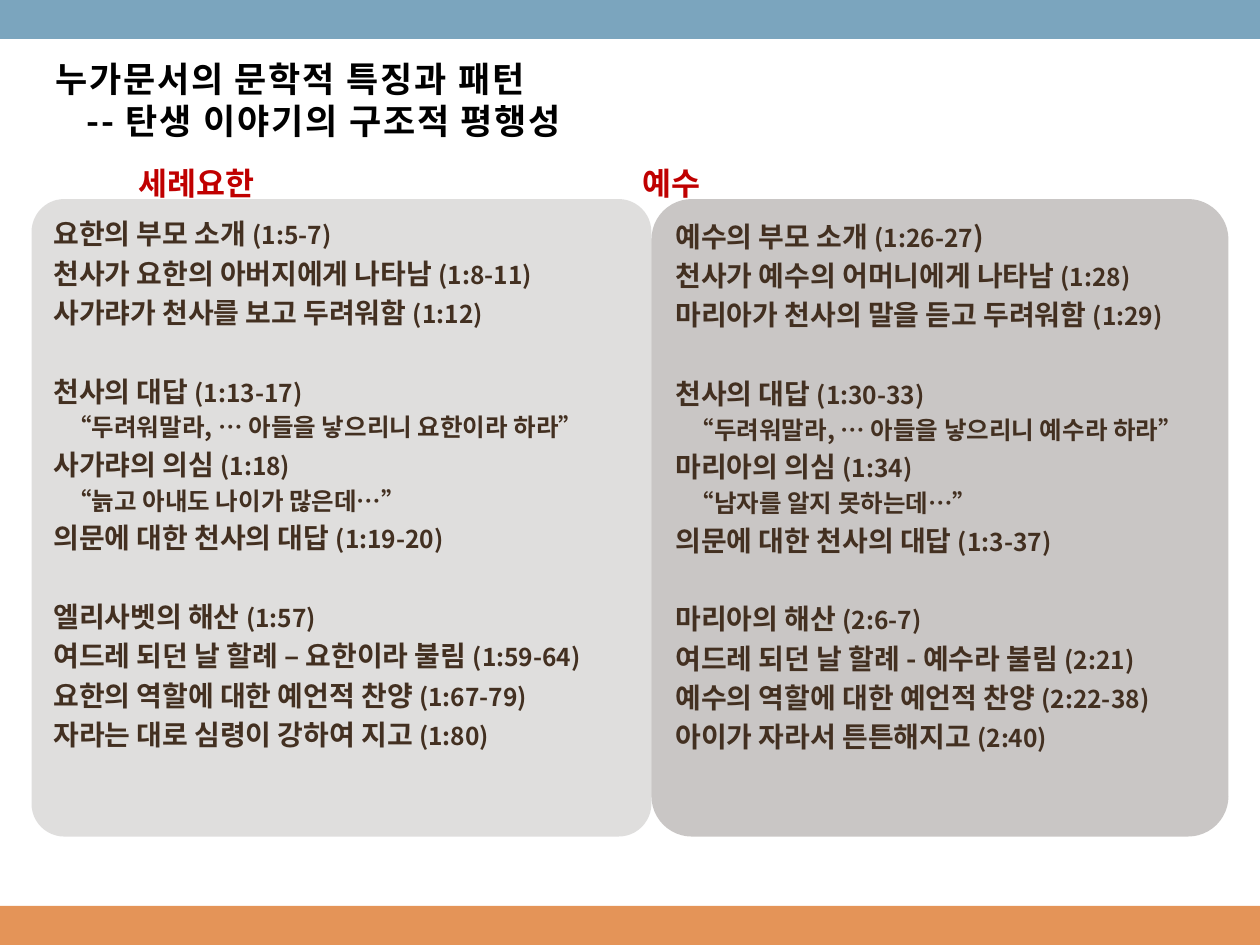
from lxml import etree
from pptx import Presentation
from pptx.dml.color import RGBColor
from pptx.enum.shapes import MSO_SHAPE
from pptx.enum.text import MSO_ANCHOR, PP_ALIGN
from pptx.oxml.ns import qn
from pptx.util import Inches, Pt

RECT = MSO_SHAPE.RECTANGLE
ROUNDED = MSO_SHAPE.ROUNDED_RECTANGLE
TOP, MIDDLE = MSO_ANCHOR.TOP, MSO_ANCHOR.MIDDLE
LEFT = PP_ALIGN.LEFT

TITLE = [("누가문서의 문학적 특징과 패턴", 0), ("-- 탄생 이야기의 구조적 평행성", 0.25)]
HEADINGS = [("세례요한", 1), ("예수", 5)]

JOHN = [
    [("요한의 부모 소개 ", "(1:5-7)"),
     ("천사가 요한의 아버지에게 나타남 ", "(1:8-11)"),
     ("사가랴가 천사를 보고 두려워함 ", "(1:12)")],
    [("천사의 대답 ", "(1:13-17)"),
     ("", "“두려워말라, … 아들을 낳으리니 요한이라 하라”"),
     ("사가랴의 의심 ", "(1:18)"),
     ("", "“늙고 아내도 나이가 많은데…”"),
     ("의문에 대한 천사의 대답 ", "(1:19-20)")],
    [("엘리사벳의 해산 ", "(1:57)"),
     ("여드레 되던 날 할례 – 요한이라 불림 ", "(1:59-64)"),
     ("요한의 역할에 대한 예언적 찬양 ", "(1:67-79)"),
     ("자라는 대로 심령이 강하여 지고 ", "(1:80)")],
]
JESUS = [
    [("예수의 부모 소개 ", "(1:26-27", ")"),
     ("천사가 예수의 어머니에게 나타남 ", "(1:28)"),
     ("마리아가 천사의 말을 듣고 두려워함 ", "(1:29)")],
    [("천사의 대답 ", "(1:30-33)"),
     ("", "“두려워말라, … 아들을 낳으리니 예수라 하라”"),
     ("마리아의 의심 ", "(1:34)"),
     ("", "“남자를 알지 못하는데…”"),
     ("의문에 대한 천사의 대답 ", "(1:3-37)")],
    [("마리아의 해산 ", "(2:6-7)"),
     ("여드레 되던 날 할례 - 예수라 불림 ", "(2:21)"),
     ("예수의 역할에 대한 예언적 찬양 ", "(2:22-38)"),
     ("아이가 자라서 튼튼해지고 ", "(2:40)")],
]


def color(value):
    return RGBColor.from_string(value)


def apply(target, values):
    for name, value in values.items():
        setattr(target, name, value)


class ParallelSlide:
    FONT = "Noto Sans CJK KR"
    INK = "433021"
    ENTRY_SIZES = (16, 14, 16)
    ENTRY_PITCH, QUOTE_PITCH = 22.5, 19.3
    QUOTE_INDENT = 0.11

    def __init__(self, slide):
        self.slide = slide

    def shape(self, kind, box, fill, alpha=100):
        panel = self.slide.shapes.add_shape(kind, *map(Inches, box))
        panel.shadow.inherit = False
        panel.line.fill.background()
        panel.fill.solid()
        panel.fill.fore_color.rgb = color(fill)
        if alpha < 100:
            tone = panel._element.spPr.find(".//" + qn("a:srgbClr"))
            etree.SubElement(tone, qn("a:alpha"), val=str(alpha * 1000))
        return panel

    def run(self, paragraph, text, size, ink, spacing=0):
        piece = paragraph.add_run()
        piece.text = text
        apply(piece.font, {"name": self.FONT, "size": Pt(size), "bold": True})
        piece.font.color.rgb = color(ink)
        properties = piece.font._element
        etree.SubElement(properties, qn("a:ea"), typeface=self.FONT)
        if spacing:
            properties.set("spc", str(spacing * 100))

    def paragraph(self, frame, first, indent=0, **values):
        line = frame.paragraphs[0] if first else frame.add_paragraph()
        apply(line, {"alignment": LEFT, **values})
        if indent:
            line._p.get_or_add_pPr().set("marL", str(Inches(indent)))
        return line

    def text(self, box, lines, size, ink, anchor=TOP, pitch=None, spacing=0):
        frame = self.slide.shapes.add_textbox(*map(Inches, box)).text_frame
        apply(frame, {"word_wrap": True, "vertical_anchor": anchor})
        for number, (words, indent) in enumerate(lines):
            line = self.paragraph(frame, number == 0, indent, line_spacing=pitch)
            self.run(line, words, size, ink, spacing)

    def story(self, box, fill, corner, groups):
        panel = self.shape(ROUNDED, box, fill, 50)
        panel.adjustments[0] = corner
        frame = panel.text_frame
        apply(frame, {"word_wrap": True, "vertical_anchor": TOP, "margin_top": Inches(0.02)})
        for group_number, group in enumerate(groups):
            for entry_number, entry in enumerate(group):
                is_quote = not entry[0]
                opens_group = entry_number == 0 and group_number > 0
                line = self.paragraph(
                    frame,
                    group_number == entry_number == 0,
                    self.QUOTE_INDENT if is_quote else 0,
                    line_spacing=Pt(self.QUOTE_PITCH if is_quote else self.ENTRY_PITCH),
                    space_before=Pt(self.ENTRY_PITCH if opens_group else 0),
                )
                for words, size in zip(entry, self.ENTRY_SIZES):
                    if words:
                        self.run(line, words, size, self.INK)


def main():
    deck = Presentation()
    apply(deck, {"slide_width": Inches(10), "slide_height": Inches(7.5)})
    page = ParallelSlide(deck.slides.add_slide(deck.slide_layouts[6]))

    page.shape(RECT, (0, 7.19, 10, 0.31), "E49458")
    page.shape(RECT, (0, 0, 10, 0.31), "7BA5BE")
    page.shape(RECT, (0, 0.31, 10, 1.25), "FFFFFF", 30)
    page.text((0.34, 0.33, 9.35, 0.92), TITLE, 20, "000000", MIDDLE, Pt(24), 1)
    page.story((0.25, 1.58, 4.92, 5.06), "C0BEBD", 0.053, JOHN)
    page.story((5.17, 1.58, 4.58, 5.06), "948F8D", 0.07, JESUS)
    for name, left in HEADINGS:
        page.text((left, 1.25, 2.83, 0.4), [(name, 0)], 18, "C00000")

    deck.save("out.pptx")


if __name__ == "__main__":
    main()
